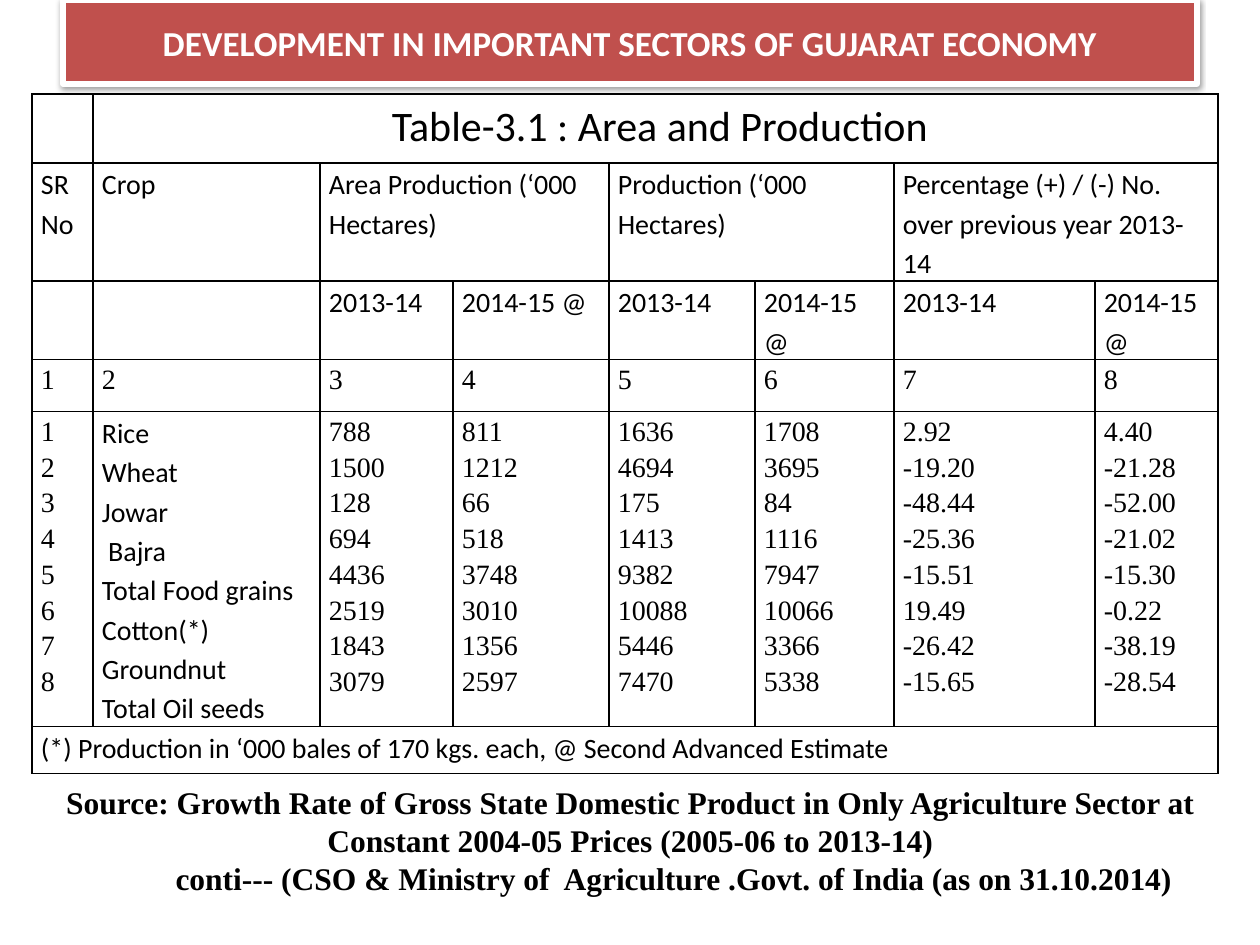
from lxml import etree
from pptx import Presentation
from pptx.dml.color import RGBColor
from pptx.enum.text import MSO_ANCHOR as Anchor, MSO_AUTO_SIZE as AutoSize, PP_ALIGN as Align
from pptx.oxml import parse_xml
from pptx.oxml.ns import qn
from pptx.util import Pt

BLACK = RGBColor(0x00, 0x00, 0x00)
WHITE = RGBColor(0xFF, 0xFF, 0xFF)
RED = RGBColor(0xC0, 0x50, 0x4D)

SANS, SERIF = "Calibri", "Times New Roman"
NS = 'xmlns:a="http://schemas.openxmlformats.org/drawingml/2006/main"'
EMU_PER_PX = 914400 / 126

COLUMNS = [61, 227, 133, 156, 146, 139, 201, 123]
ROWS = [69, 88, 68, 52, 310, 47]
GROUPS = [
    "Area Production (‘000 Hectares)",
    "Production (‘000 Hectares)",
    "Percentage (+) / (-) No. over previous year 2013-14",
]
YEARS = ["2013-14", "2014-15 @"]
CROPS = ["Rice", "Wheat", "Jowar", " Bajra", "Total Food grains Cotton(*)",
         "Groundnut", "Total Oil seeds"]
FIGURES = [
    "1 2 3 4 5 6 7 8",
    "788 1500 128 694 4436 2519 1843 3079",
    "811 1212 66 518 3748 3010 1356 2597",
    "1636 4694 175 1413 9382 10088 5446 7470",
    "1708 3695 84 1116 7947 10066 3366 5338",
    "2.92 -19.20 -48.44 -25.36 -15.51 19.49 -26.42 -15.65",
    "4.40 -21.28 -52.00 -21.02 -15.30 -0.22 -38.19 -28.54",
]


def px(n):
    return round(n * EMU_PER_PX)


class SlideBuilder:
    def __init__(self, prs):
        self.slide = prs.slides.add_slide(prs.slide_layouts[5])

    def add_run(self, p, text, size, font, color=BLACK, bold=False):
        r = p.add_run()
        r.text = text
        r.font.color.rgb = color
        for name, value in dict(size=Pt(size), name=font, bold=bold).items():
            setattr(r.font, name, value)

    def title(self, box, text):
        sp = self.slide.shapes.title
        sp.left, sp.top, sp.width, sp.height = map(px, box)
        sp.fill.solid()
        sp.fill.fore_color.rgb = RED
        sp.line.color.rgb = WHITE
        sp.line.width = Pt(3)
        sp._element.spPr.append(parse_xml(
            f'<a:effectLst {NS}><a:outerShdw blurRad="40000" dist="20000" dir="5400000" '
            'rotWithShape="0"><a:srgbClr val="000000"><a:alpha val="38000"/></a:srgbClr>'
            '</a:outerShdw></a:effectLst>'))
        tf = sp.text_frame
        tf.vertical_anchor = Anchor.MIDDLE
        p = tf.paragraphs[0]
        p.alignment = Align.CENTER
        self.add_run(p, text, 20, SANS, WHITE, True)

    def table(self, box, columns, rows):
        frame = self.slide.shapes.add_table(len(rows), len(columns), *map(px, box))
        table = frame.table
        table.first_row = table.horz_banding = False
        for column, width in zip(table.columns, columns):
            column.width = px(width)
        for row, height in zip(table.rows, rows):
            row.height = px(height)
        frame.height = px(box[3])
        for cell in table.iter_cells():
            self.border(cell)
            cell.fill.background()
        return table

    def border(self, cell):
        tc_pr = cell._tc.get_or_add_tcPr()
        for side in ("lnL", "lnR", "lnT", "lnB"):
            tc_pr.append(parse_xml(
                f'<a:{side} {NS} w="12700"><a:solidFill><a:srgbClr val="{BLACK}"/>'
                f'</a:solidFill></a:{side}>'))

    def cell(self, table, row, col, lines, font=SANS, size=16, span=1):
        """Fill a cell with one paragraph per line and return the paragraphs."""
        cell = table.cell(row, col)
        if span > 1:
            cell.merge(table.cell(row, col + span - 1))
        margins = dict(margin_left=9, margin_right=9, margin_top=0, margin_bottom=0)
        for name, value in margins.items():
            setattr(cell, name, px(value))
        tf = cell.text_frame
        for i, line in enumerate(lines):
            p = tf.add_paragraph() if i else tf.paragraphs[0]
            p.line_spacing = 1.15
            self.add_run(p, line, size, font)
        return tf.paragraphs

    def tab_stop(self, p, position):
        tabs = etree.SubElement(p._p.get_or_add_pPr(), qn("a:tabLst"))
        etree.SubElement(tabs, qn("a:tab"), pos=str(px(position)), algn="l")

    def note(self, box, lines):
        """Add a centred text box; each line is a (text, left indent) pair."""
        tf = self.slide.shapes.add_textbox(*map(px, box)).text_frame
        tf.word_wrap = True
        tf.auto_size = AutoSize.SHAPE_TO_FIT_TEXT
        for i, (text, indent) in enumerate(lines):
            p = tf.add_paragraph() if i else tf.paragraphs[0]
            p.alignment = Align.CENTER
            if indent:
                p._p.get_or_add_pPr().set("marL", str(px(indent)))
            self.add_run(p, text, 18, SERIF, bold=True)


def main():
    prs = Presentation()
    prs.slide_width, prs.slide_height = px(1260), px(945)
    s = SlideBuilder(prs)
    s.title((63, 0, 1134, 84), "DEVELOPMENT IN IMPORTANT SECTORS OF GUJARAT ECONOMY")

    crops = s.table((32, 94, 1187, 670), COLUMNS, ROWS)
    heading = s.cell(crops, 0, 1, ["\tTable-3.1 : Area and Production"], size=24, span=7)[0]
    s.tab_stop(heading, 290)
    s.cell(crops, 1, 0, ["SR", "No"])
    s.cell(crops, 1, 1, ["Crop"])
    for i, group in enumerate(GROUPS):
        col = 2 + 2 * i
        s.cell(crops, 1, col, [group], span=2)
        for j, year in enumerate(YEARS):
            s.cell(crops, 2, col + j, [year])
    for col in range(len(COLUMNS)):
        s.cell(crops, 3, col, [str(col + 1)], SERIF)
    s.cell(crops, 4, 1, CROPS)
    for col, figures in zip([0, *range(2, 8)], FIGURES):
        s.cell(crops, 4, col, figures.split(), SERIF)
    s.cell(crops, 5, 0, ["(*) Production in ‘000 bales of 170 kgs. each, "
                         "@ Second Advanced Estimate"], span=8)

    s.note((32, 777, 1197, 127), [
        ("Source: Growth Rate of Gross State Domestic Product in Only Agriculture Sector at "
         "Constant 2004-05 Prices (2005-06 to 2013-14)", 0),
        ("conti--- (CSO & Ministry of  Agriculture .Govt. of India (as on 31.10.2014)", 87),
    ])
    prs.save("out.pptx")


if __name__ == "__main__":
    main()
